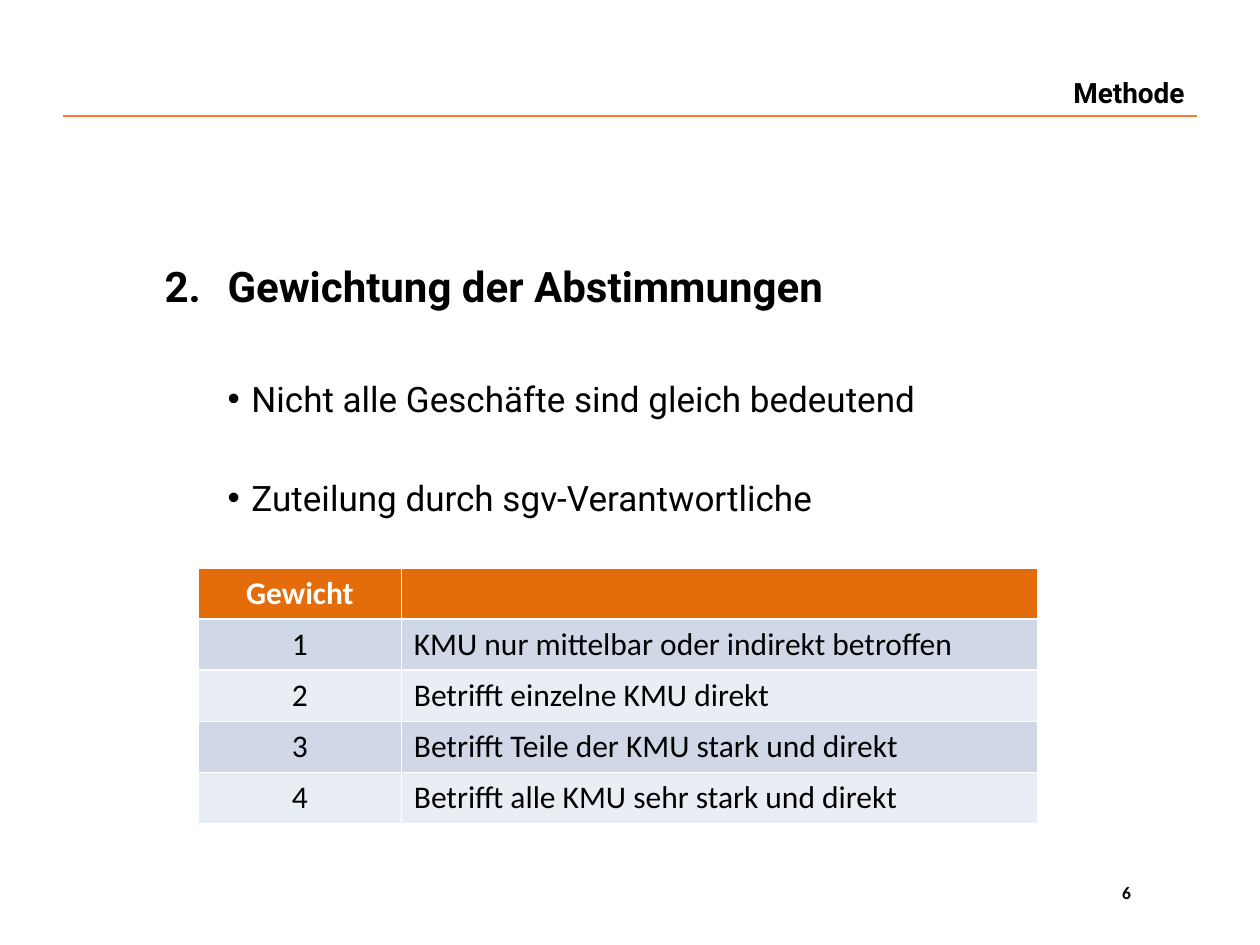
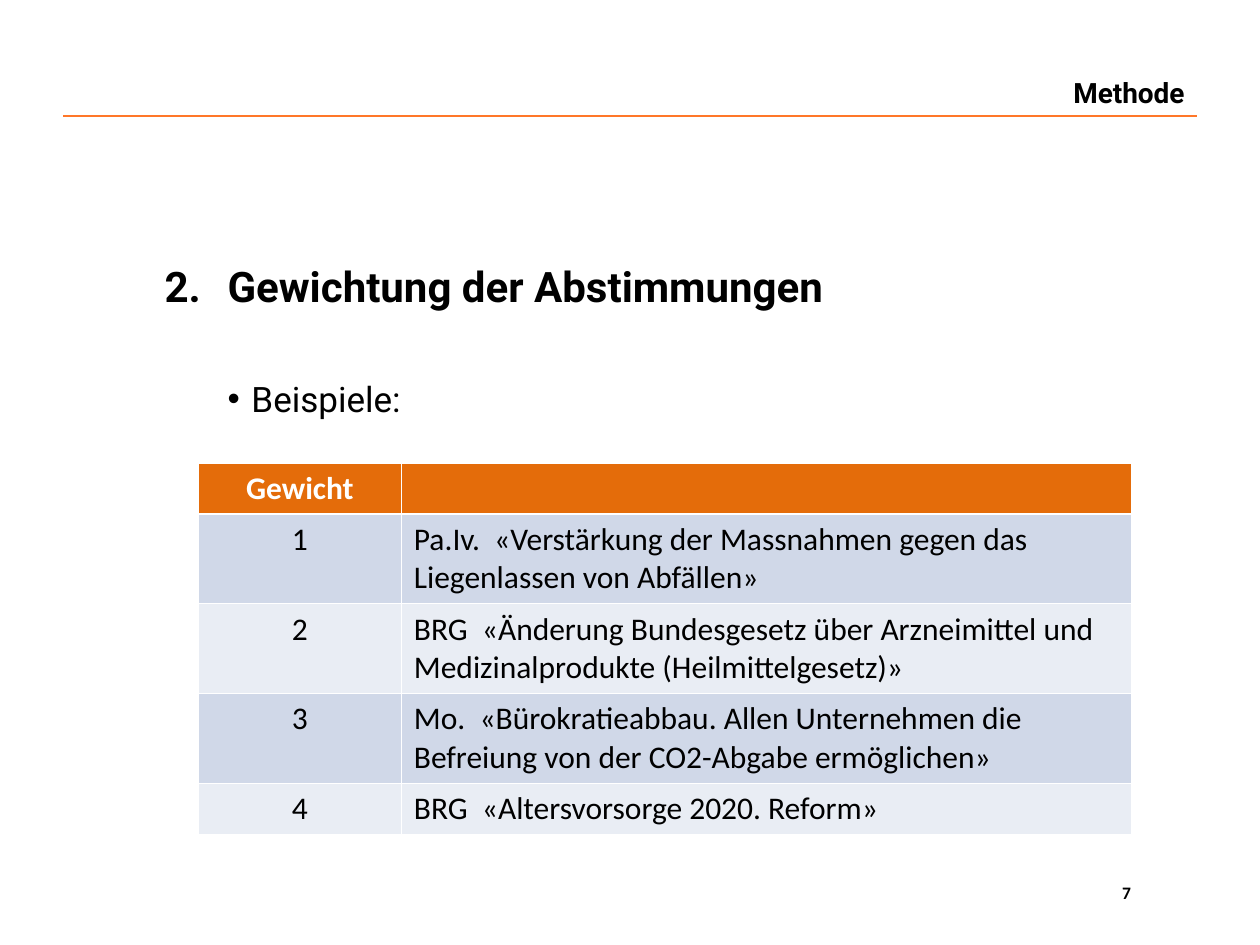
from lxml.etree import SubElement
from pptx import Presentation
from pptx.dml.color import RGBColor
from pptx.enum.shapes import MSO_CONNECTOR
from pptx.enum.text import MSO_ANCHOR, PP_ALIGN
from pptx.oxml.ns import qn
from pptx.util import Cm, Pt

BLACK = RGBColor(0x00, 0x00, 0x00)
WHITE = RGBColor(0xFF, 0xFF, 0xFF)
RULE_ORANGE = RGBColor(0xFF, 0x77, 0x29)
HEADER_ORANGE = RGBColor(0xE4, 0x6C, 0x0A)
BAND_DARK = RGBColor(0xD0, 0xD8, 0xE8)
BAND_LIGHT = RGBColor(0xE9, 0xED, 0xF4)
TEXT_FONT = "Roboto"
TABLE_FONT = "Calibri"

HEADING_GAP = Pt(38)
BULLET_GAP = Pt(32.5)
LINE_HEIGHT = 0.78
CELL_PADDING = 0.25
WEIGHT_WIDTH = 4.09

TITLE_BOX = (10.49, 1.09, 13.64, 1.55)
RULE_BOX = (1.27, 2.34, 22.86, 0)
BODY_BOX = (3.07, 5.13, 21.06, 6)
NUMBER_BOX = (20.93, 17.65, 3.56, 0.51)

SLIDES = [
    {
        "number": 6,
        "bullets": ["Nicht alle Geschäfte sind gleich bedeutend",
                    "Zuteilung durch sgv-Verantwortliche"],
        "table_box": (4, 11.45, 16.92),
        "rows": [("KMU nur mittelbar oder indirekt betroffen", 1),
                 ("Betrifft einzelne KMU direkt", 1),
                 ("Betrifft Teile der KMU stark und direkt", 1),
                 ("Betrifft alle KMU sehr stark und direkt", 1)],
    },
    {
        "number": 7,
        "bullets": ["Beispiele:"],
        "table_box": (4, 9.33, 18.82),
        "rows": [("Pa.Iv.  «Verstärkung der Massnahmen gegen das "
                  "Liegenlassen von Abfällen»", 2),
                 ("BRG  «Änderung Bundesgesetz über Arzneimittel und "
                  "Medizinalprodukte (Heilmittelgesetz)»", 2),
                 ("Mo.  «Bürokratieabbau. Allen Unternehmen die "
                  "Befreiung von der CO2-Abgabe ermöglichen»", 2),
                 ("BRG  «Altersvorsorge 2020. Reform»", 1)],
    },
]


def add_run(paragraph, text, size, font=TEXT_FONT, bold=False, color=BLACK):
    """Append one formatted run to the paragraph."""
    run = paragraph.add_run()
    run.text = text
    run.font.name = font
    run.font.size = Pt(size)
    run.font.bold = bold
    run.font.color.rgb = color


def add_text_frame(slide, box, anchor=MSO_ANCHOR.TOP):
    """Add a wrapping text box and return its text frame."""
    text_frame = slide.shapes.add_textbox(*map(Cm, box)).text_frame
    text_frame.word_wrap = True
    text_frame.vertical_anchor = anchor
    return text_frame


def set_indent(paragraph, margin, hanging, bullet=None):
    """Give the paragraph a hanging indent and, if wanted, a bullet."""
    properties = paragraph._p.get_or_add_pPr()
    properties.set("marL", str(Cm(margin)))
    properties.set("indent", str(-Cm(hanging)))
    if bullet:
        SubElement(properties, qn("a:buFont"), typeface="Arial")
        SubElement(properties, qn("a:buChar"), char=bullet)


def add_header(slide, title):
    """Draw the right-aligned title and the rule beneath it."""
    left, top, width, height = RULE_BOX
    rule = slide.shapes.add_connector(
        MSO_CONNECTOR.STRAIGHT, Cm(left), Cm(top), Cm(left + width), Cm(top + height))
    rule.line.color.rgb = RULE_ORANGE
    rule.line.width = Pt(1.5)
    SubElement(rule._element.spPr, qn("a:effectLst"))
    paragraph = add_text_frame(slide, TITLE_BOX, MSO_ANCHOR.MIDDLE).paragraphs[0]
    paragraph.alignment = PP_ALIGN.RIGHT
    add_run(paragraph, title, 16, bold=True)


def add_body(slide, box, heading, bullets):
    """Write the numbered heading and its bullets."""
    text_frame = add_text_frame(slide, box)
    paragraph = text_frame.paragraphs[0]
    set_indent(paragraph, 1.27, 1.27)
    add_run(paragraph, heading, 24, bold=True)
    for index, bullet in enumerate(bullets):
        paragraph = text_frame.add_paragraph()
        paragraph.space_before = BULLET_GAP if index else HEADING_GAP
        set_indent(paragraph, 1.75, 0.48, "•")
        add_run(paragraph, bullet, 20)


def fill_cell(cell, text, fill, centered=False, bold=False, color=BLACK):
    """Colour a table cell and write its text."""
    cell.fill.solid()
    cell.fill.fore_color.rgb = fill
    paragraph = cell.text_frame.paragraphs[0]
    paragraph.alignment = PP_ALIGN.CENTER if centered else PP_ALIGN.LEFT
    if text:
        add_run(paragraph, text, 18, TABLE_FONT, bold, color)


def add_weight_table(slide, box, rows):
    """Add the table that explains each weight."""
    left, top, width = box
    heights = [CELL_PADDING + LINE_HEIGHT * lines for lines in [1] + [row[1] for row in rows]]
    table = slide.shapes.add_table(
        len(heights), 2, Cm(left), Cm(top), Cm(width), Cm(sum(heights))).table
    table.columns[0].width = Cm(WEIGHT_WIDTH)
    table.columns[1].width = Cm(width - WEIGHT_WIDTH)
    for row, height in zip(table.rows, heights):
        row.height = Cm(height)
    fill_cell(table.cell(0, 0), "Gewicht", HEADER_ORANGE, True, True, WHITE)
    fill_cell(table.cell(0, 1), "", HEADER_ORANGE)
    for weight, (description, _) in enumerate(rows, start=1):
        band = BAND_DARK if weight % 2 else BAND_LIGHT
        fill_cell(table.cell(weight, 0), str(weight), band, centered=True)
        fill_cell(table.cell(weight, 1), description, band)


def add_page_number(slide, number):
    """Write the page number at the bottom right."""
    paragraph = add_text_frame(slide, NUMBER_BOX).paragraphs[0]
    paragraph.alignment = PP_ALIGN.CENTER
    add_run(paragraph, str(number), 10, TABLE_FONT, bold=True)


def add_method_slide(presentation, number, bullets, table_box, rows):
    """Build one slide on the weighting method."""
    slide = presentation.slides.add_slide(presentation.slide_layouts[6])
    add_header(slide, "Methode")
    add_body(slide, BODY_BOX, "2.\tGewichtung der Abstimmungen", bullets)
    add_page_number(slide, number)
    add_weight_table(slide, table_box, rows)


def main():
    """Build and save the presentation."""
    presentation = Presentation()
    presentation.slide_width = Cm(25.4)
    presentation.slide_height = Cm(19.05)
    for content in SLIDES:
        add_method_slide(presentation, **content)
    presentation.save("out.pptx")


if __name__ == "__main__":
    main()
